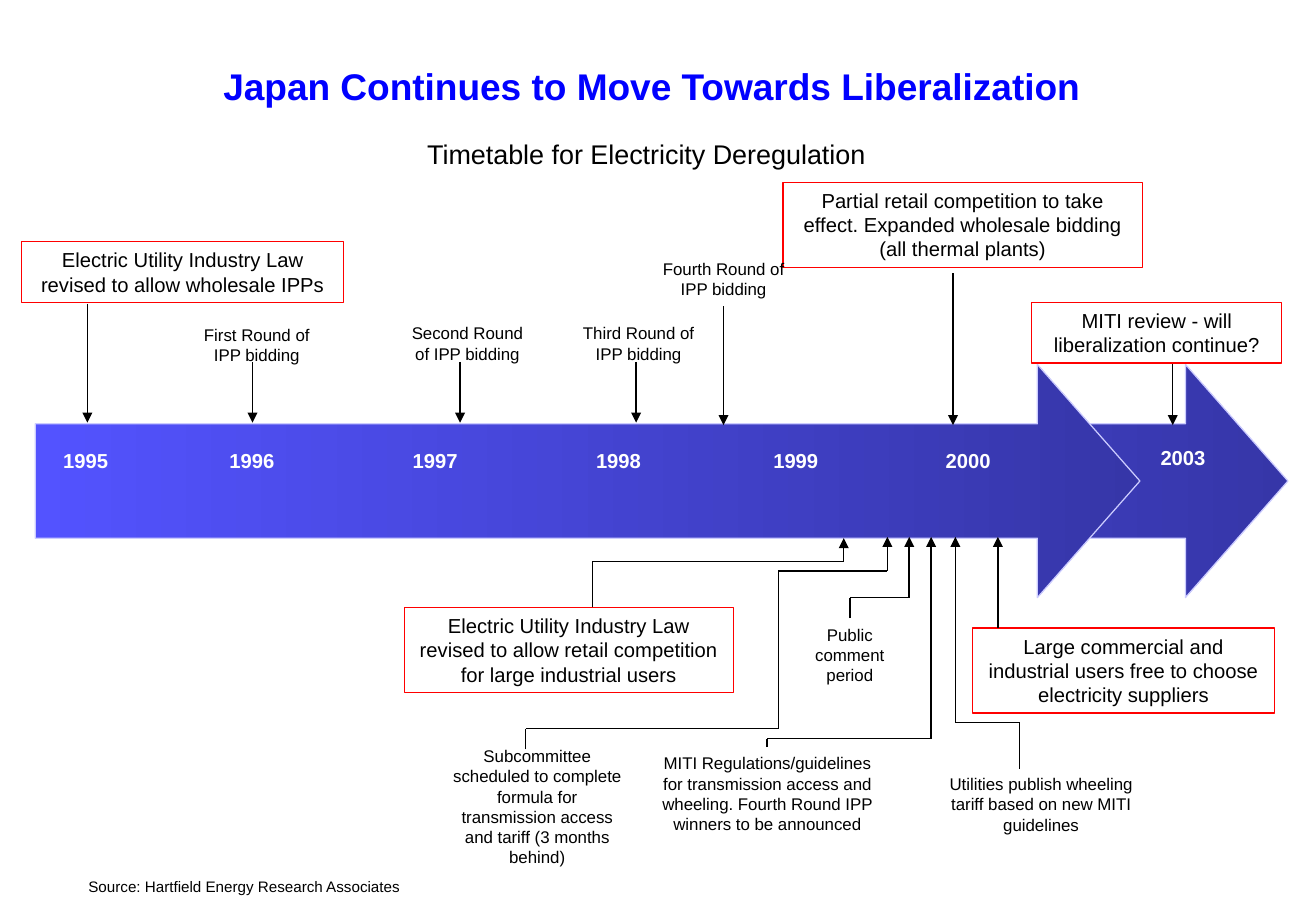
from itertools import pairwise

from lxml import etree
from pptx import Presentation
from pptx import util as u
from pptx.dml.color import RGBColor
from pptx.enum import shapes, text
from pptx.oxml.ns import qn

EMU_PER_PX = 9144  # 100 px to the inch
FONT = "Arial"
BLACK = RGBColor(0x00, 0x00, 0x00)
WHITE = RGBColor(0xFF, 0xFF, 0xFF)
RED = RGBColor(0xFF, 0x00, 0x00)
BLUE = RGBColor(0x00, 0x00, 0xFF)
ARROW_DARK = RGBColor(0x36, 0x36, 0xA8)
ARROW_LIGHT = RGBColor(0x53, 0x53, 0xFF)
ARROW_EDGE = RGBColor(0xCC, 0xCC, 0xFF)

TITLE = "Japan Continues to Move Towards Liberalization"
SUBTITLE = "Timetable for Electricity Deregulation"
SOURCE = "Source: Hartfield Energy Research Associates"

# Left edges of the two block arrows, back one first
ARROW_LEFTS = (151, 29)
ARROW_TOP, ARROW_WIDTH, ARROW_HEIGHT = 300, 910, 192

# Year, left, top
YEARS = [
    ("1995", 52, 369),
    ("1996", 189, 369),
    ("1997", 340, 369),
    ("1998", 491, 369),
    ("1999", 637, 369),
    ("2000", 779, 369),
    ("2003", 956, 367),
]
YEAR_WIDTH, YEAR_HEIGHT = 60, 20

# Text, (left, top, width, height), fill
MILESTONES = [
    ("Electric Utility Industry Law revised to allow wholesale IPPs",
     (18, 199, 265, 50), None),
    ("Partial retail competition to take effect. Expanded wholesale bidding "
     "(all thermal plants)", (645, 150, 296, 70), None),
    ("Electric Utility Industry Law revised to allow retail competition for "
     "large industrial users", (333, 500, 271, 70), None),
    ("MITI review - will liberalization continue?",
     (850, 249, 206, 50), None),
    ("Large commercial and industrial users free to choose electricity "
     "suppliers", (801, 517, 249, 70), WHITE),
]

# Name: text, (left, top, width, height)
NOTES = {
    "first": ("First Round of IPP bidding", (153, 262, 117, 44)),
    "second": ("Second Round of IPP bidding", (322, 261, 126, 44)),
    "third": ("Third Round of IPP bidding", (463, 261, 126, 44)),
    "fourth": ("Fourth Round of IPP bidding", (533, 208, 126, 44)),
    "subcommittee": ("Subcommittee scheduled to complete formula for "
                     "transmission access and tariff (3 months behind)",
                     (361, 609, 163, 110)),
    "regulations": ("MITI Regulations/guidelines for transmission access and "
                    "wheeling. Fourth Round IPP winners to be announced",
                    (532, 615, 200, 77)),
    "tariff": ("Utilities publish wheeling tariff based on new MITI "
               "guidelines", (758, 632, 199, 60)),
    "comment": ("Public comment period", (650, 509, 100, 60)),
}

# Corner points (the arrowhead is at the last), line width, joined (note, side)
ROUTES = [
    ([(72, 250), (72, 348)], 0.75, None),
    ([(208, 298), (208, 348)], 0.75, None),
    ([(379, 298), (379, 348)], 0.75, None),
    ([(524, 298), (524, 348)], 0.75, None),
    ([(596, 252), (596, 350)], 0.75, ("fourth", 2)),
    ([(785, 225), (785, 350)], 0.75, None),
    ([(966, 300), (966, 350)], 0.75, None),
    ([(488, 500), (488, 462), (695, 462), (695, 443)], 0.75, None),
    ([(433, 617), (433, 600), (641, 600), (641, 470), (731, 470), (731, 442)],
     0.75, None),
    ([(700, 509), (700, 492), (749, 492), (749, 442)], 1, ("comment", 0)),
    ([(632, 615), (632, 608), (767, 608), (767, 442)], 1, ("regulations", 0)),
    ([(840, 633), (840, 595), (787, 595), (787, 442)], 0.75, None),
    ([(822, 517), (822, 442)], 1, None),
]


def px(*lengths):
    return [u.Emu(length * EMU_PER_PX) for length in lengths]


def write(shape, words, size, color=BLACK, bold=False, centred=True,
          wrap=True, inset=True):
    frame = shape.text_frame
    frame.text = words
    frame.word_wrap = wrap
    frame.auto_size = text.MSO_AUTO_SIZE.SHAPE_TO_FIT_TEXT
    frame.vertical_anchor = text.MSO_ANCHOR.TOP
    if not inset:
        frame.margin_left = frame.margin_right = 0
        frame.margin_top = frame.margin_bottom = 0
    paragraph = frame.paragraphs[0]
    paragraph.alignment = text.PP_ALIGN.CENTER if centred else text.PP_ALIGN.LEFT
    font = paragraph.runs[0].font
    font.name, font.size, font.bold = FONT, u.Pt(size), bold
    font.color.rgb = color


def add_label(slide, box, words, size, **style):
    label = slide.shapes.add_textbox(*px(*box))
    write(label, words, size, **style)
    return label


def add_block_arrow(slide, left):
    arrow = slide.shapes.add_shape(
        shapes.MSO_SHAPE.RIGHT_ARROW,
        *px(left, ARROW_TOP, ARROW_WIDTH, ARROW_HEIGHT))
    arrow.shadow.inherit = False
    arrow.adjustments[0], arrow.adjustments[1] = 0.49, 0.44
    arrow.fill.gradient()
    arrow.fill.gradient_angle = 180
    for stop, color in zip(arrow.fill.gradient_stops, (ARROW_DARK, ARROW_LIGHT)):
        stop.color.rgb = color
    arrow.line.color.rgb = ARROW_EDGE
    arrow.line.width = u.Pt(0.75)


def add_milestone(slide, words, box, fill):
    milestone = slide.shapes.add_shape(shapes.MSO_SHAPE.RECTANGLE, *px(*box))
    milestone.shadow.inherit = False
    if fill is None:
        milestone.fill.background()
    else:
        milestone.fill.solid()
        milestone.fill.fore_color.rgb = fill
    milestone.line.color.rgb = RED
    milestone.line.width = u.Pt(0.75)
    write(milestone, words, 12)


def add_route(slide, points, width, joined_note, side):
    """Draw straight segments through the points, with a head on the last."""
    for start, end in pairwise(points):
        line = slide.shapes.add_connector(
            shapes.MSO_CONNECTOR.STRAIGHT, *px(*start, *end))
        if joined_note is not None and start == points[0]:
            line.begin_connect(joined_note, side)
        line.line.color.rgb = BLACK
        line.line.width = u.Pt(width)
        if end == points[-1]:
            etree.SubElement(line.line._get_or_add_ln(), qn("a:tailEnd"),
                             type="triangle")
        etree.SubElement(line._element.spPr, qn("a:effectLst"))


def main():
    presentation = Presentation()
    presentation.slide_width, presentation.slide_height = px(1084, 750)
    slide = presentation.slides.add_slide(presentation.slide_layouts[5])

    for left in ARROW_LEFTS:
        add_block_arrow(slide, left)

    title = slide.shapes.title
    title.left, title.top, title.width, title.height = px(54, 8, 966, 125)
    write(title, TITLE, 22, color=BLUE, bold=True)
    title.text_frame.auto_size = text.MSO_AUTO_SIZE.NONE
    title.text_frame.vertical_anchor = text.MSO_ANCHOR.MIDDLE

    add_label(slide, (342, 108, 388, 37), SUBTITLE, 16, centred=False, wrap=False)
    add_label(slide, (63, 717, 334, 25), SOURCE, 9, centred=False)
    for year, left, top in YEARS:
        add_label(slide, (left, top, YEAR_WIDTH, YEAR_HEIGHT), year, 12,
                  color=WHITE, bold=True, centred=False, inset=False)
    for words, box, fill in MILESTONES:
        add_milestone(slide, words, box, fill)
    notes = {name: add_label(slide, box, words, 10)
             for name, (words, box) in NOTES.items()}
    for points, width, joint in ROUTES:
        name, side = joint or (None, None)
        add_route(slide, points, width, notes.get(name), side)

    presentation.save("out.pptx")


if __name__ == "__main__":
    main()
